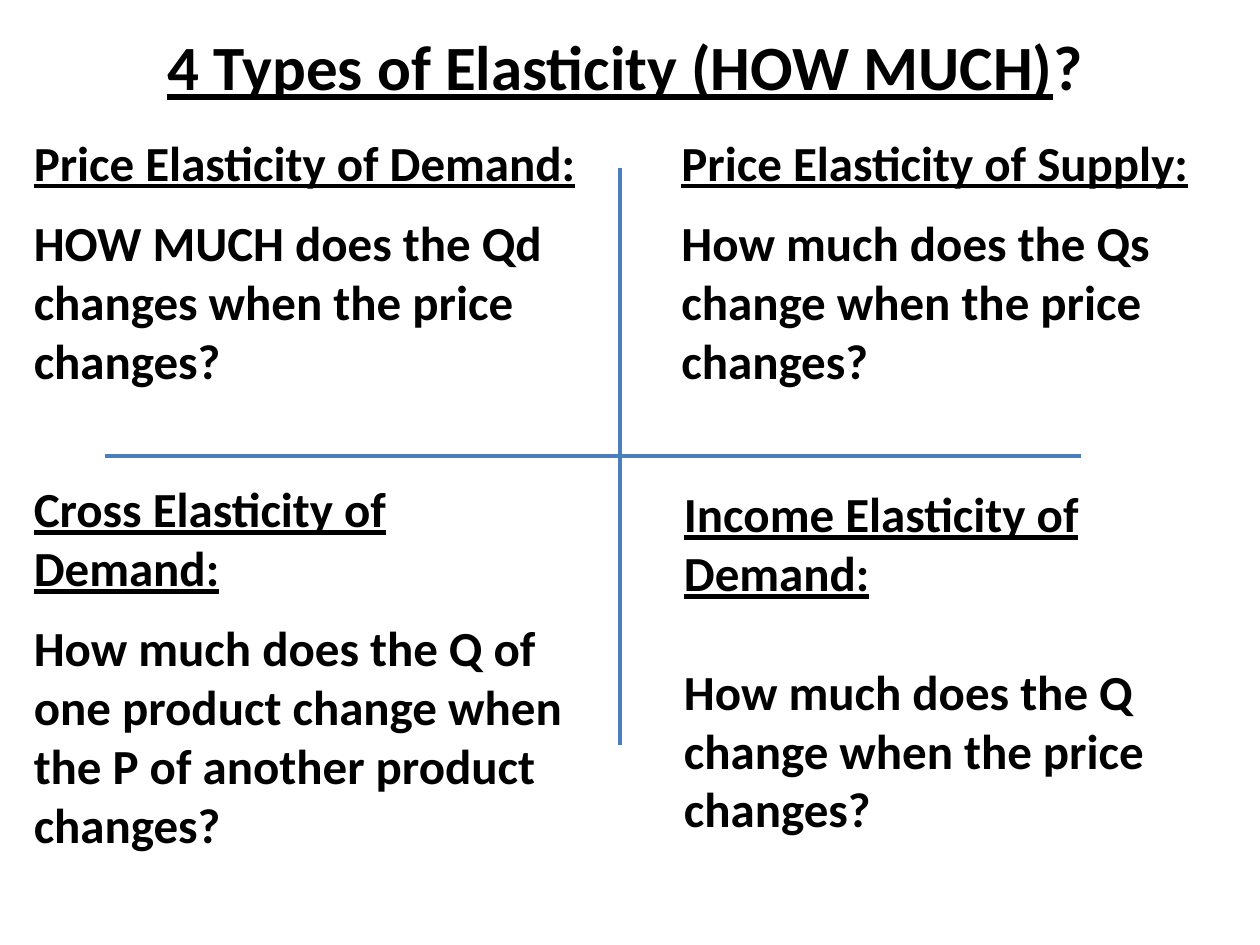
from pptx import Presentation
from pptx.dml.color import RGBColor
from pptx.enum.shapes import MSO_CONNECTOR
from pptx.enum.text import MSO_ANCHOR, MSO_AUTO_SIZE, PP_ALIGN
from pptx.oxml.ns import qn
from pptx.util import Inches, Pt

BLACK, BLUE = "000000", "4B7EBC"

# left, top, width, height, gap below the heading in points, heading, question
QUADRANTS = [
    (0.17, 1, 4.54, 2.15, 12.2, "Price Elasticity of Demand:",
     "HOW MUCH does the Qd changes when the price changes?"),
    (5.31, 1, 4.58, 2.15, 12.2, "Price Elasticity of Supply:",
     "How much does the Qs change when the price changes?"),
    (0.17, 3.75, 4.54, 3.1, 12.2, "Cross Elasticity of Demand:",
     "How much does the Q of one product change when the P of another product changes?"),
    (5.33, 3.79, 4.58, 2.93, 34.2, "Income Elasticity of Demand:",
     "How much does the Q change when the price changes?"),
]


def color(hex_string):
    return RGBColor.from_string(hex_string)


def set_font(font, size):
    font.name, font.size, font.bold = "Calibri", Pt(size), True
    font.color.rgb = color(BLACK)


def add_title(page, left, top, width, height):
    title = page.shapes.title
    title.left, title.top = Inches(left), Inches(top)
    title.width, title.height = Inches(width), Inches(height)
    frame = title.text_frame
    frame.auto_size = MSO_AUTO_SIZE.NONE
    frame.vertical_anchor = MSO_ANCHOR.TOP
    para = frame.paragraphs[0]
    para.alignment = PP_ALIGN.CENTER
    set_font(para.font, 36)
    for text, underlined in (("4 Types of Elasticity (HOW MUCH)", True), ("?", False)):
        span = para.add_run()
        span.text = text
        span.font.underline = underlined


def add_quadrant(page, left, top, width, height, gap, heading, question):
    box = page.shapes.add_textbox(Inches(left), Inches(top), Inches(width), Inches(height))
    frame = box.text_frame
    frame.word_wrap = True
    heading_para, question_para = frame.paragraphs[0], frame.add_paragraph()
    for para, text in ((heading_para, heading), (question_para, question)):
        para.text = text
        set_font(para.font, 28)
    heading_para.font.underline = True
    heading_para.space_after = Pt(gap)


def add_divider(page, x1, y1, x2, y2):
    line = page.shapes.add_connector(
        MSO_CONNECTOR.STRAIGHT, Inches(x1), Inches(y1), Inches(x2), Inches(y2))
    line.line.color.rgb = color(BLUE)
    line.line.width = Pt(2.25)
    properties = line._element.spPr
    properties.append(properties.makeelement(qn("a:effectLst"), {}))


def main():
    deck = Presentation()
    deck.slide_width, deck.slide_height = Inches(10), Inches(7.5)
    page = deck.slides.add_slide(deck.slide_layouts[5])

    add_title(page, 0.25, 0.17, 9.42, 0.67)
    for quadrant in QUADRANTS:
        add_quadrant(page, *quadrant)

    # Cross between the quadrants
    add_divider(page, 4.92, 1.33, 4.92, 5.91)
    add_divider(page, 0.83, 3.62, 8.58, 3.62)

    deck.save("out.pptx")


if __name__ == "__main__":
    main()
